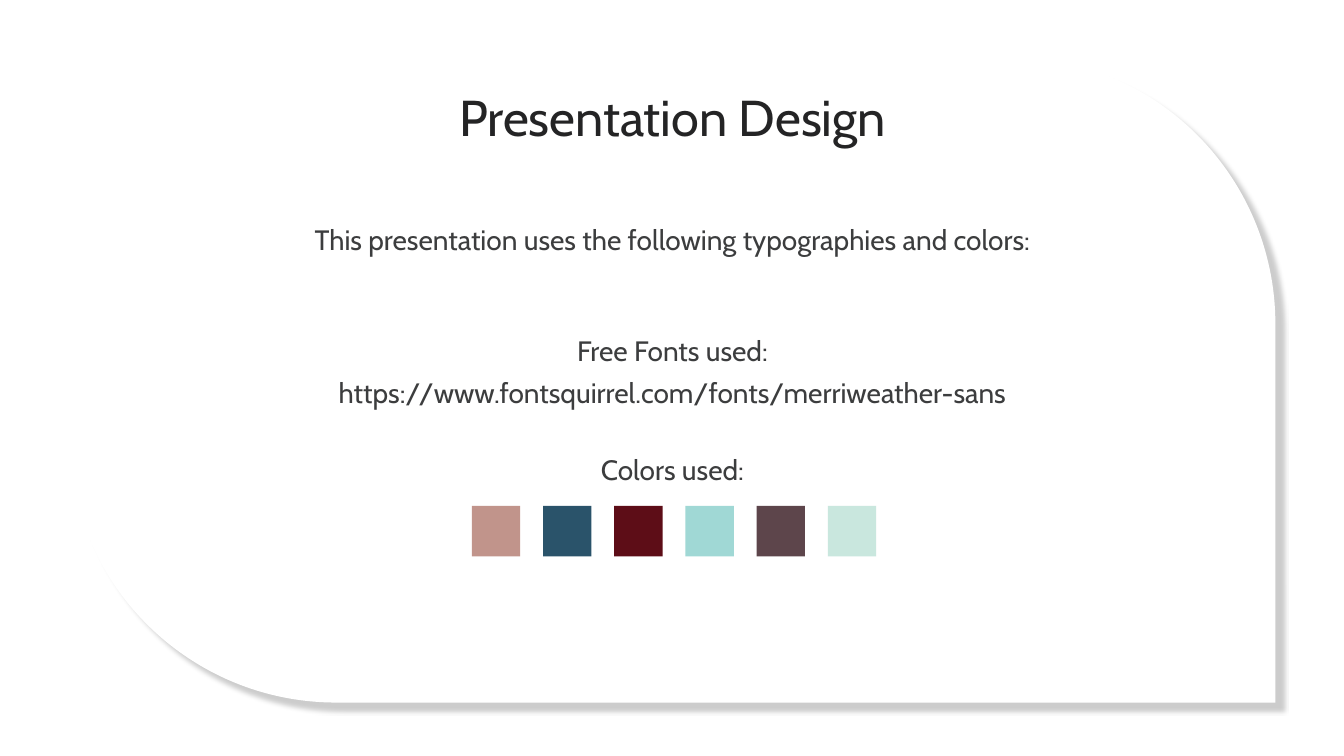
from lxml import etree
from pptx import Presentation
from pptx.dml.color import RGBColor
from pptx.enum import shapes, text
from pptx.oxml import ns
from pptx.util import Inches, Pt

FONT = "Cabin"
COLORS = {"panel": "FFFFFF", "title": "242425", "body": "3C3D3E", "shadow": "000000"}
PALETTE = {
    "rose": "C1948B",
    "blue": "2A536A",
    "burgundy": "5D0D17",
    "aqua": "A0D8D5",
    "plum": "5D454B",
    "mint": "C9E7DE",
}
TEXT_LEFT, TEXT_WIDTH = 2.38, 8.58


def add_block(slide, kind, left, top, width, height, color):
    block = slide.shapes.add_shape(
        kind, Inches(left), Inches(top), Inches(width), Inches(height))
    block.shadow.inherit = False
    block.fill.solid()
    block.fill.fore_color.rgb = RGBColor.from_string(color)
    block.line.fill.background()
    return block


def add_panel(slide):
    panel = add_block(slide, shapes.MSO_SHAPE.ROUND_2_DIAG_RECTANGLE,
                      0.68, 0.56, 11.97, 6.41, COLORS["panel"])
    panel.adjustments[0] = 0
    panel.adjustments[1] = 0.414
    # Soft shadow towards the lower right
    effects = panel._element.spPr.find(ns.qn("a:effectLst"))
    shadow = etree.SubElement(
        effects, ns.qn("a:outerShdw"), blurRad=str(Pt(2)), dist=str(Pt(10)),
        dir=str(45 * 60000), algn="tl", rotWithShape="0")
    tint = etree.SubElement(shadow, ns.qn("a:srgbClr"), val=COLORS["shadow"])
    etree.SubElement(tint, ns.qn("a:alpha"), val="20000")


def write_lines(box, lines, size, color, spacing=None):
    frame = box.text_frame
    frame.word_wrap = True
    frame.auto_size = text.MSO_AUTO_SIZE.SHAPE_TO_FIT_TEXT
    frame.vertical_anchor = text.MSO_ANCHOR.TOP
    for i, line in enumerate(lines):
        paragraph = frame.add_paragraph() if i else frame.paragraphs[0]
        paragraph.alignment = text.PP_ALIGN.CENTER
        paragraph.space_before = Pt(0)
        if spacing:
            paragraph.line_spacing = Pt(spacing)
        run = paragraph.add_run()
        run.text = line
        run.font.name = FONT
        run.font.size = Pt(size)
        run.font.color.rgb = RGBColor.from_string(color)


def add_title(slide, wording):
    title = slide.shapes.title
    title.left, title.top = Inches(TEXT_LEFT), Inches(0.8)
    title.width, title.height = Inches(TEXT_WIDTH), Inches(0.71)
    write_lines(title, [wording], 36, COLORS["title"])


def add_body(slide, top, height, lines, spacing=None):
    body = slide.shapes.add_textbox(
        Inches(TEXT_LEFT), Inches(top), Inches(TEXT_WIDTH), Inches(height))
    write_lines(body, lines, 20, COLORS["body"], spacing)


def add_swatches(slide):
    first, last = 4.68, 8.21
    pitch = (last - first) / (len(PALETTE) - 1)
    for i, color in enumerate(PALETTE.values()):
        add_block(slide, shapes.MSO_SHAPE.RECTANGLE,
                  first + i * pitch, 5.02, 0.48, 0.5, color)


def main():
    deck = Presentation()
    deck.slide_width, deck.slide_height = Inches(13.33), Inches(7.5)
    slide = deck.slides.add_slide(deck.slide_layouts.get_by_name("Title Only"))

    # Background panel, moved behind the title
    add_panel(slide)
    tree = slide.shapes._spTree
    tree.append(slide.shapes.title._element)

    # Title and text
    add_title(slide, "Presentation Design")
    add_body(slide, 2.16, 0.44,
             ["This presentation uses the following typographies and colors:"])
    add_body(slide, 3.18, 0.91,
             ["Free Fonts used:",
              "https://www.fontsquirrel.com/fonts/merriweather-sans"], spacing=30)
    add_body(slide, 4.44, 0.44, ["Colors used:"])

    # Palette
    add_swatches(slide)
    deck.save("out.pptx")


if __name__ == "__main__":
    main()
